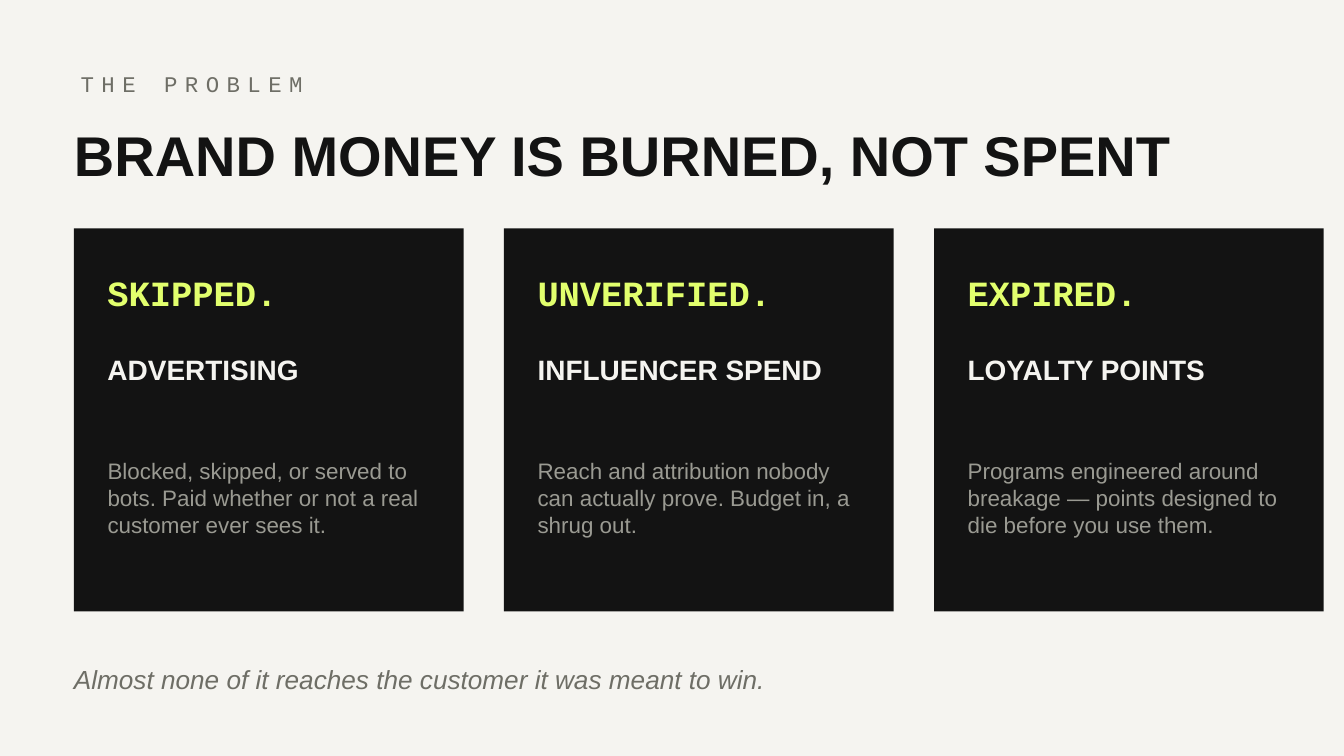
from dataclasses import dataclass

from pptx import Presentation
from pptx import util as u
from pptx.dml.color import RGBColor
from pptx.enum import shapes, text

PAPER, INK, LIME = "F5F4F0", "131313", "E2FF6D"
GREY, PALE_GREY = "6E6E66", "9A9A92"
SANS, MONO = "Arial", "Courier New"

EYEBROW = {"name": MONO, "size": u.Pt(12), "color": GREY}
HEADLINE = {"name": SANS, "size": u.Pt(30), "color": INK, "bold": True}
VERDICT = {"name": MONO, "size": u.Pt(19), "color": LIME, "bold": True}
CHANNEL = {"name": SANS, "size": u.Pt(15), "color": PAPER, "bold": True}
DETAIL = {"name": SANS, "size": u.Pt(12), "color": PALE_GREY}
CLOSING = {"name": SANS, "size": u.Pt(14), "color": GREY, "italic": True}

MARGIN, CARD_TOP, CARD_WIDTH, CARD_HEIGHT = 0.55, 1.7, 2.9, 2.85
CARD_GAP, CARD_PADDING = 0.3, 0.25


@dataclass
class Card:
    verdict: str
    channel: str
    detail: str


CARDS = [
    Card("SKIPPED.", "ADVERTISING",
         "Blocked, skipped, or served to bots. Paid whether or not a real customer ever sees it."),
    Card("UNVERIFIED.", "INFLUENCER SPEND",
         "Reach and attribution nobody can actually prove. Budget in, a shrug out."),
    Card("EXPIRED.", "LOYALTY POINTS",
         "Programs engineered around breakage — points designed to die before you use them."),
]


def paint(color_format, value: str) -> None:
    color_format.rgb = RGBColor.from_string(value)


def write(box, words: str, style: dict):
    """Fill a text shape with one styled run and return the run."""
    frame = box.text_frame
    frame.word_wrap = True
    frame.auto_size = text.MSO_AUTO_SIZE.NONE
    frame.vertical_anchor = text.MSO_ANCHOR.MIDDLE
    for side in ("left", "top", "right", "bottom"):
        setattr(frame, f"margin_{side}", 0)
    para = frame.paragraphs[0]
    para.alignment = text.PP_ALIGN.LEFT
    span = para.add_run()
    span.text = words
    for key, value in style.items():
        if key == "color":
            paint(span.font.color, value)
        else:
            setattr(span.font, key, value)
    return span


def add_text(page, left: float, top: float, width: float, height: float,
             words: str, style: dict):
    box = page.shapes.add_textbox(*map(u.Inches, (left, top, width, height)))
    return write(box, words, style)


def add_card(page, left: float, card: Card) -> None:
    panel = page.shapes.add_shape(
        shapes.MSO_SHAPE.RECTANGLE,
        *map(u.Inches, (left, CARD_TOP, CARD_WIDTH, CARD_HEIGHT)))
    panel.shadow.inherit = False
    panel.fill.solid()
    paint(panel.fill.fore_color, INK)
    panel.line.fill.background()

    inner = left + CARD_PADDING
    add_text(page, inner, 1.95, 2.4, 0.45, card.verdict, VERDICT)
    add_text(page, inner, 2.55, 2.4, 0.4, card.channel, CHANNEL)
    add_text(page, inner, 3, 2.45, 1.4, card.detail, DETAIL)


def main() -> None:
    deck = Presentation()
    deck.slide_width = u.Inches(10)
    deck.slide_height = deck.slide_width * 9 // 16
    page = deck.slides.add_slide(deck.slide_layouts.get_by_name("Title Only"))
    page.background.fill.solid()
    paint(page.background.fill.fore_color, PAPER)

    eyebrow = add_text(page, 0.6, 0.45, 8.8, 0.35, "THE PROBLEM", EYEBROW)
    eyebrow.font._element.set("spc", "400")

    title = page.shapes.title
    title.left, title.top, title.width, title.height = map(
        u.Inches, (MARGIN, 0.85, 8.9, 0.6))
    write(title, "BRAND MONEY IS BURNED, NOT SPENT", HEADLINE)

    for index, card in enumerate(CARDS):
        add_card(page, MARGIN + index * (CARD_WIDTH + CARD_GAP), card)

    add_text(page, MARGIN, 4.85, 8.9, 0.4,
             "Almost none of it reaches the customer it was meant to win.", CLOSING)
    deck.save("out.pptx")


if __name__ == "__main__":
    main()
